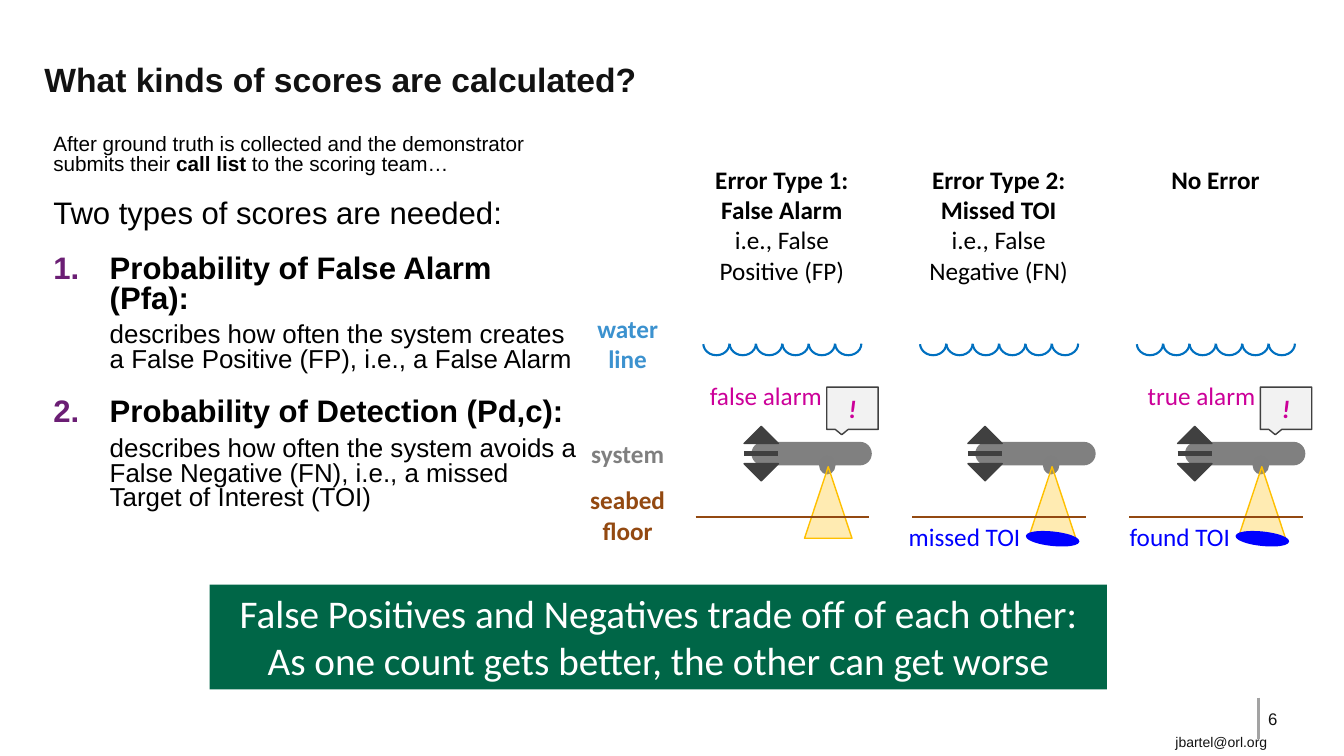
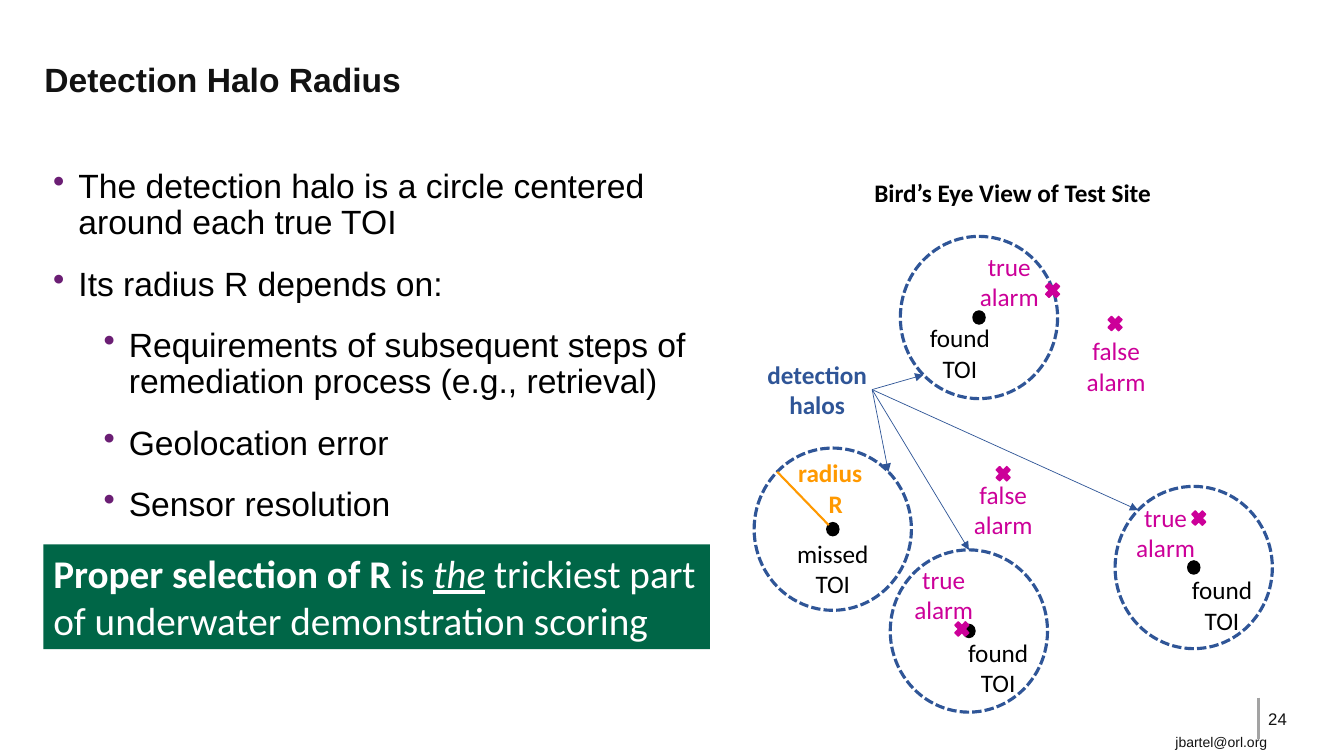
from dataclasses import dataclass
from math import cos, radians, sin
from typing import NamedTuple

from lxml import etree
from pptx import Presentation
from pptx.dml.color import RGBColor
from pptx.enum.dml import MSO_LINE
from pptx.enum.shapes import MSO_CONNECTOR, MSO_SHAPE
from pptx.enum.text import MSO_ANCHOR, PP_ALIGN
from pptx.oxml.ns import qn
from pptx.util import Inches, Pt

LEFT, CENTER, RIGHT = PP_ALIGN.LEFT, PP_ALIGN.CENTER, PP_ALIGN.RIGHT
TOP, MIDDLE = MSO_ANCHOR.TOP, MSO_ANCHOR.MIDDLE
STRAIGHT = MSO_CONNECTOR.STRAIGHT
DASHED = MSO_LINE.SQUARE_DOT
RECTANGLE, PILL = MSO_SHAPE.RECTANGLE, MSO_SHAPE.ROUNDED_RECTANGLE
OVAL, TRIANGLE, ARC = MSO_SHAPE.OVAL, MSO_SHAPE.ISOSCELES_TRIANGLE, MSO_SHAPE.ARC
CALLOUT, CROSS = MSO_SHAPE.RECTANGULAR_CALLOUT, MSO_SHAPE.MATH_MULTIPLY
TITLE_ONLY = 5


@dataclass(frozen=True)
class Theme:
    """Colours, fonts and type sizes shared by the slides."""
    heading_font: str = "Arial"
    label_font: str = "Calibri"
    ink: str = "121212"
    black: str = "000000"
    white: str = "FFFFFF"
    rule: str = "A3A3A3"
    bullet: str = "6B1E74"
    banner: str = "006647"
    water_label: str = "3C92CF"
    water: str = "0070C0"
    seabed: str = "934911"
    system: str = "7F7F7F"
    hull: str = "808080"
    fin: str = "404040"
    beam: str = "FFC000"
    target: str = "0000FF"
    alarm: str = "CC0099"
    callout: str = "F2F2F2"
    halo: str = "2F5597"
    radius: str = "FF9900"
    title_size: float = 24
    body_size: float = 24
    lead_size: float = 22.2
    detail_size: float = 18.5
    intro_size: float = 14.8
    banner_size: float = 28
    label_size: float = 18
    number_size: float = 12
    contact_size: float = 10


THEME = Theme()


class Box(NamedTuple):
    """A rectangle in inches that can place others relative to itself."""
    left: float
    top: float
    width: float = 0
    height: float = 0

    def place(self, left, top, width=0, height=0):
        """Return a box offset from this one's top left corner."""
        return Box(self.left + left, self.top + top, width, height)

    def around(self, center, width, height):
        """Return a box centred on an offset from the top left corner."""
        return self.place(center[0] - width / 2, center[1] - height / 2, width, height)

    def lengths(self):
        """Return the four measures as slide lengths."""
        return [Inches(value) for value in self]


@dataclass(frozen=True)
class Line:
    """One paragraph: runs of (text, font changes) and its layout."""
    runs: tuple
    before: float = 0
    spacing: float = 1
    margin: float = 0
    hanging: float = 0
    bullet: tuple = ()
    level: int = 0


def plain(text, **changes):
    """Return a one-run paragraph."""
    return Line(((text, changes),))


def set_font(font, color, **formats):
    """Apply a colour and other font values."""
    font.color.rgb = RGBColor.from_string(color)
    for name, value in formats.items():
        setattr(font, name, Pt(value) if name == "size" else value)


def write(frame, lines, align=LEFT, anchor=TOP, insets=(0.1, 0.05), **base):
    """Fill a text frame with formatted paragraphs."""
    side, edge = map(Inches, insets)
    settings = dict(word_wrap=True, vertical_anchor=anchor, margin_left=side,
                    margin_right=side, margin_top=edge, margin_bottom=edge)
    for name, value in settings.items():
        setattr(frame, name, value)
    for index, line in enumerate(lines):
        paragraph = frame.paragraphs[0] if index == 0 else frame.add_paragraph()
        properties = paragraph._p.get_or_add_pPr()
        properties.set("marL", str(Inches(line.margin)))
        properties.set("indent", str(Inches(-line.hanging)))
        if line.bullet:
            tag, attributes = line.bullet
            color = etree.SubElement(properties, qn("a:buClr"))
            etree.SubElement(color, qn("a:srgbClr"), val=THEME.bullet)
            etree.SubElement(properties, qn(tag), **attributes)
        layout = dict(alignment=align, level=line.level, line_spacing=line.spacing,
                      space_before=Pt(line.before if index else 0))
        for name, value in layout.items():
            setattr(paragraph, name, value)
        for text, changes in line.runs:
            run = paragraph.add_run()
            run.text = text
            set_font(run.font, **{**base, **changes})


def add_text(shapes, box, lines, **formats):
    """Add a text box."""
    shape = shapes.add_textbox(*box.lengths())
    write(shape.text_frame, lines, **formats)
    return shape


def add_label(shapes, box, text, color, **formats):
    """Add a diagram label without side insets."""
    options = dict(align=CENTER, insets=(0, 0.05), name=THEME.label_font,
                   size=THEME.label_size, color=color)
    return add_text(shapes, box, [plain(text)], **{**options, **formats})


def add_figure(shapes, kind, box, fill=None, line=None, width=1, alpha=None, rotation=0):
    """Add a preset shape with flat fill and outline."""
    shape = shapes.add_shape(kind, *box.lengths())
    shape.shadow.inherit = False
    shape.rotation = rotation
    if fill:
        shape.fill.solid()
        shape.fill.fore_color.rgb = RGBColor.from_string(fill)
    else:
        shape.fill.background()
    if alpha:
        color = shape._element.spPr.find(qn("a:solidFill"))[0]
        etree.SubElement(color, qn("a:alpha"), val=str(alpha * 1000))
    if line:
        shape.line.color.rgb = RGBColor.from_string(line)
        shape.line.width = Pt(width)
    else:
        shape.line.fill.background()
    return shape


def add_line(shapes, start, end, color, width, arrow=False):
    """Add a straight connector between two points."""
    points = [Inches(value) for value in (*start[:2], *end[:2])]
    connector = shapes.add_connector(STRAIGHT, *points)
    connector.line.color.rgb = RGBColor.from_string(color)
    connector.line.width = Pt(width)
    properties = connector._element.spPr
    if arrow:
        etree.SubElement(properties.find(qn("a:ln")), qn("a:tailEnd"), type="triangle")
    etree.SubElement(properties, qn("a:effectLst"))
    return connector


def add_page(presentation, title, number):
    """Add a slide with its title, page number and contact."""
    slide = presentation.slides.add_slide(presentation.slide_layouts[TITLE_ONLY])
    heading = slide.shapes.title
    heading.left, heading.top, heading.width, heading.height = Box(0.34, 0.34, 12.65, 0.89).lengths()
    write(heading.text_frame, [plain(title)], anchor=MIDDLE, name=THEME.heading_font,
          size=THEME.title_size, color=THEME.ink, bold=True)
    footer = Box(11.56, 6.92, 1.44, 0.58)
    small = dict(name=THEME.heading_font, color=THEME.ink)
    add_line(slide.shapes, footer.place(0.92, 0), footer.place(0.92, 0.41), THEME.rule, 2)
    add_text(slide.shapes, footer.place(0.92, 0.06, 0.52, 0.27), [plain(str(number))],
             size=THEME.number_size, **small)
    add_text(slide.shapes, footer.place(0, 0.31, 1.28, 0.27), [plain("jbartel@orl.org")],
             size=THEME.contact_size, **small)
    return slide


def add_banner(slide, box, lines, align):
    """Add the green band with the key message."""
    band = add_figure(slide.shapes, RECTANGLE, box, THEME.banner)
    write(band.text_frame, lines, align=align, name=THEME.label_font,
          size=THEME.banner_size, color=THEME.white)


def add_vehicle(slide, box):
    """Draw the underwater system and its sensor beam."""
    shapes = slide.shapes.add_group_shape().shapes
    hull = add_figure(shapes, PILL, box.place(0.08, 0.16, 1.18, 0.22), THEME.hull, THEME.hull)
    hull.adjustments[0] = 0.5
    for top, rotation in ((0, 0), (0.37, 180)):
        add_figure(shapes, TRIANGLE, box.place(0, top, 0.34, 0.17), THEME.fin, THEME.fin,
                   rotation=rotation)
    add_line(shapes, box.place(0, 0.27), box.place(0.34, 0.27), THEME.fin, 3)
    add_figure(shapes, OVAL, box.place(0.75, 0.3, 0.15, 0.17), THEME.system, THEME.system)
    add_figure(slide.shapes, TRIANGLE, box.place(0.6, 0.4, 0.47, 0.71), THEME.beam, THEME.beam,
               alpha=30)


def add_waves(slide, box, count=6):
    """Draw a row of scallops for the water line."""
    shapes = slide.shapes.add_group_shape().shapes
    for index in range(count):
        scallop = add_figure(shapes, ARC, box.place(index * box.width / count, 0, 0.23, 0.26),
                             line=THEME.water, width=1.5, rotation=90)
        scallop.adjustments[1] = 52.53


def add_case(slide, box, heading, alarm, target, shift):
    """Draw one detection outcome as a column."""
    shapes = slide.shapes
    vehicle = box.place(shift, 2.65)
    add_vehicle(slide, vehicle)
    if target:
        add_figure(shapes, OVAL, vehicle.place(0.58, 1.05, 0.52, 0.13), THEME.target,
                   THEME.target, rotation=6)
        add_label(shapes, vehicle.place(-0.66, 0.89, 1.18, 0.4), target, THEME.target, align=RIGHT)
    if alarm:
        callout = add_figure(shapes, CALLOUT, box.place(1.39, 2.26, 0.51, 0.42),
                             THEME.callout, THEME.fin)
        write(callout.text_frame, [plain("!")], align=CENTER, anchor=MIDDLE, bold=True,
              italic=True, name=THEME.label_font, size=THEME.label_size, color=THEME.alarm)
        add_label(shapes, box.place(0.16, 2.14, 1.18, 0.4), alarm, THEME.alarm, align=RIGHT)
    add_line(shapes, box.place(0.09, 3.55), box.place(1.81, 3.55), THEME.seabed, 1.5)
    add_waves(slide, box.place(0.18, 1.7, 1.57))
    add_text(shapes, box.place(0, 0, box.width, 1.31), heading, align=CENTER,
             name=THEME.label_font, size=THEME.label_size, color=THEME.black)


def add_cases(slide, box):
    """Draw the row labels and the three outcome columns."""
    rows = (("water line", 1.48, 0.71, THEME.water_label), ("system", 2.72, 0.4, THEME.system),
            ("seabed floor", 3.18, 0.71, THEME.seabed))
    for text, top, height, color in rows:
        add_label(slide.shapes, box.place(0, top, 0.77, height), text, color, bold=True)
    cases = (
        (("Error Type 1:", "False Alarm"), "i.e., False Positive (FP)", "false alarm", None, 0.57),
        (("Error Type 2:", "Missed TOI"), "i.e., False Negative (FN)", None, "missed TOI", 0.64),
        (("No Error",), None, "true alarm", "found TOI", 0.57))
    for index, (names, note, alarm, target, shift) in enumerate(cases):
        heading = [plain(name, bold=True) for name in names] + ([plain(note)] if note else [])
        add_case(slide, box.place(0.97 + 2.15 * index, 0, 1.89), heading, alarm, target, shift)


def add_site_map(slide, box):
    """Draw the test site with halos, targets and alarms."""
    shapes = slide.shapes
    width, height = 1.56, 1.61

    def rim(center, angle):
        """Return the point of a halo's edge at an angle."""
        return box.place(center[0] + width / 2 * cos(radians(angle)),
                         center[1] + height / 2 * sin(radians(angle)))

    def tag(center, text, color):
        """Add a two-line label around a point."""
        add_label(shapes, box.around(center, 0.78, 0.61), text, color, insets=(0, 0), anchor=MIDDLE)

    add_label(shapes, box.place(0.63, 0.01, 3.83, 0.4), "Bird’s Eye View of Test Site",
              THEME.black, bold=True)
    source = add_label(shapes, box.place(0.06, 1.86, 1.09, 0.61), "detection halos", THEME.halo,
                       bold=True, insets=(0, 0))
    halos = (((2.21, 1.45), 135, (-0.19, 0.35), "found TOI"),
             ((4.34, 3.93), 225, (0.28, 0.37), "found TOI"),
             ((2.11, 4.56), 270, (0.29, 0.36), "found TOI"),
             ((0.76, 3.55), 315, (0, 0.39), "missed TOI"))
    for center, angle, offset, text in halos:
        arrow = add_line(shapes, box.place(1.15, 2.17), rim(center, angle), THEME.halo, 0.5, True)
        arrow.begin_connect(source, 3)
        add_figure(shapes, OVAL, box.around(center, 0.12, 0.13), THEME.black, THEME.black)
        halo = add_figure(shapes, OVAL, box.around(center, width, height),
                          line=THEME.halo, width=2.25)
        halo.line.dash_style = DASHED
        tag((center[0] + offset[0], center[1] + offset[1]), text, THEME.black)
    alarms = (((2.94, 1.18), (2.51, 1.09), "true alarm"), ((2.45, 3), (2.45, 3.35), "false alarm"),
              ((3.56, 1.51), (3.57, 1.93), "false alarm"), ((2.04, 4.54), (1.86, 4.2), "true alarm"),
              ((4.39, 3.44), (4.06, 3.58), "true alarm"))
    for center, label_center, text in alarms:
        add_figure(shapes, CROSS, box.around(center, 0.2, 0.21), THEME.alarm, THEME.alarm)
        tag(label_center, text, THEME.alarm)
    missed = halos[-1][0]
    add_line(shapes, box.place(missed[0] - 0.04, missed[1] - 0.04), rim(missed, 225), THEME.radius, 1.5)
    add_text(shapes, box.place(0.37, 2.79, 0.73, 0.71),
             [plain("radius"), Line((("R", {}),), margin=0.11)], align=CENTER, insets=(0, 0.05),
             name=THEME.label_font, size=THEME.label_size, color=THEME.radius, bold=True)


def build_scores(presentation):
    """Build the slide on the kinds of scores."""
    slide = add_page(presentation, "What kinds of scores are calculated?", 6)
    lines = [Line((("After ground truth is collected and the demonstrator submits their ", {}),
                   ("call list", {"bold": True}), (" to the scoring team…", {})), spacing=0.8),
             Line((("Two types of scores are needed:", {"size": THEME.lead_size}),), 18, 0.8)]
    scores = (("Probability of False Alarm (Pfa):",
               "describes how often the system creates a False Positive (FP), i.e., a False Alarm"),
              ("Probability of Detection (Pd,c):",
               "describes how often the system avoids a False Negative (FN), i.e., a missed "
               "Target of Interest (TOI)"))
    for number, (name, detail) in enumerate(scores, 1):
        bullet = ("a:buAutoNum", {"type": "arabicPeriod", "startAt": str(number)})
        lines += [Line(((name, {"size": THEME.lead_size, "bold": True}),), 18, 0.8, 0.56, 0.56, bullet),
                  Line(((detail, {"size": THEME.detail_size}),), 6, 0.8, 0.56)]
    add_cases(slide, Box(5.84, 1.58, 7.16, 3.94))
    add_text(slide.shapes, Box(0.43, 1.3, 5.42, 4.04), lines, name=THEME.heading_font,
             size=THEME.intro_size, color=THEME.black)
    add_banner(slide, Box(2.08, 5.8, 8.9, 1.04),
               [plain("False Positives and Negatives trade off of each other:"),
                plain("As one count gets better, the other can get worse")], CENTER)


def build_halo(presentation):
    """Build the slide on the detection halo."""
    slide = add_page(presentation, "Detection Halo Radius", 24)
    points = ((0, "The detection halo is a circle centered around each true TOI"),
              (0, "Its radius R depends on:"),
              (1, "Requirements of subsequent steps of remediation process (e.g., retrieval)"),
              (1, "Geolocation error"), (1, "Sensor resolution"))
    lines = [Line(((text, {}),), 18, 0.9, 0.25 + 0.5 * level, 0.25, ("a:buChar", {"char": "•"}), level)
             for level, text in points]
    add_text(slide.shapes, Box(0.43, 1.63, 6.8, 4.99), lines, name=THEME.heading_font,
             size=THEME.body_size, color=THEME.black)
    message = Line((("Proper selection of R ", {"bold": True}), ("is ", {}),
                    ("the", {"italic": True, "underline": True}),
                    (" trickiest part of underwater demonstration scoring", {})))
    add_banner(slide, Box(0.43, 5.4, 6.61, 1.04), [message], LEFT)
    add_site_map(slide, Box(7.5, 1.7, 5.12, 5.36))


def main():
    """Build and save the presentation."""
    presentation = Presentation()
    presentation.slide_width, presentation.slide_height = Inches(13.33), Inches(7.5)
    build_scores(presentation)
    build_halo(presentation)
    presentation.save("out.pptx")


if __name__ == "__main__":
    main()
